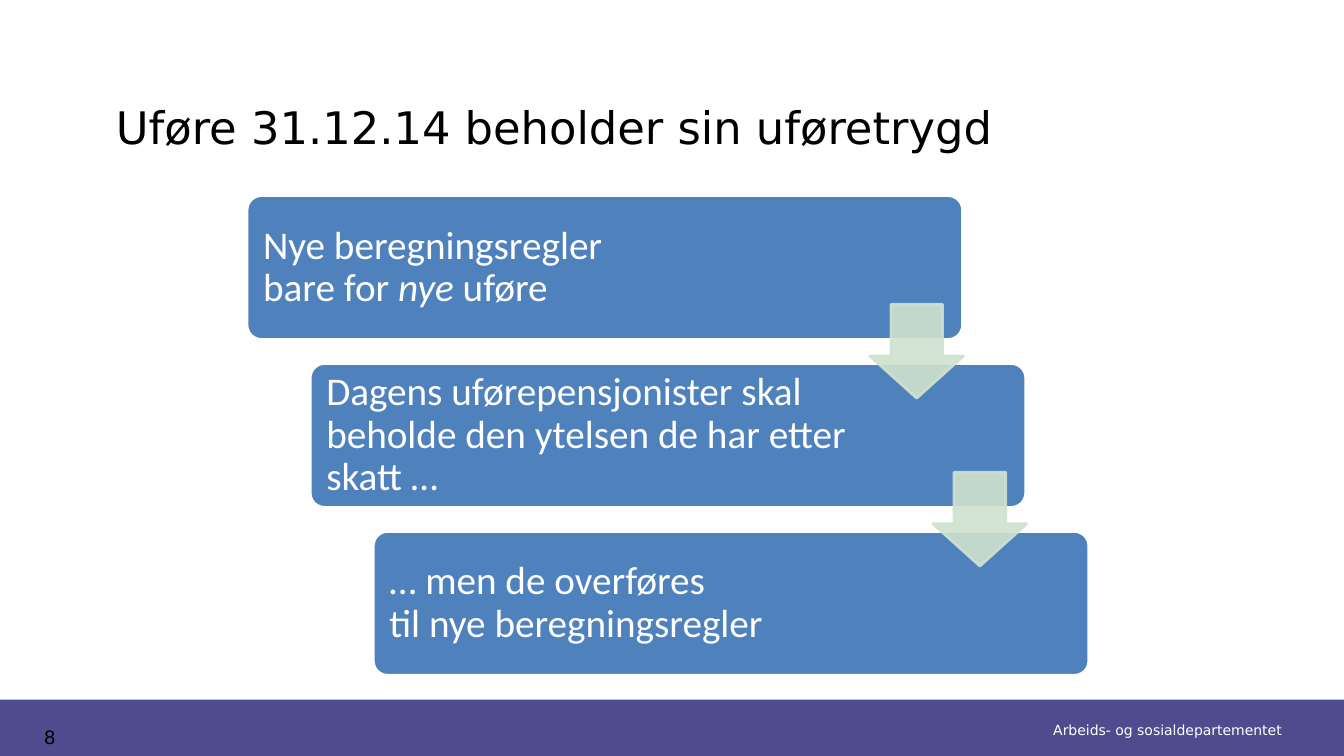
from lxml import etree
from pptx import Presentation
from pptx.dml.color import RGBColor
from pptx.enum.shapes import MSO_SHAPE
from pptx.enum.text import MSO_ANCHOR, PP_ALIGN
from pptx.oxml.ns import qn
from pptx.util import Inches, Pt

RECT, ROUND_RECT, DOWN_ARROW = (
    MSO_SHAPE.RECTANGLE, MSO_SHAPE.ROUNDED_RECTANGLE, MSO_SHAPE.DOWN_ARROW)
TOP, MIDDLE, BOTTOM = MSO_ANCHOR.TOP, MSO_ANCHOR.MIDDLE, MSO_ANCHOR.BOTTOM
LEFT, CENTER, RIGHT = PP_ALIGN.LEFT, PP_ALIGN.CENTER, PP_ALIGN.RIGHT

PURPLE = RGBColor(0x4E, 0x4C, 0x8E)
BLUE = RGBColor(0x4F, 0x81, 0xBD)
GREEN = RGBColor(0xCF, 0xE2, 0xCF)
WHITE = RGBColor(0xFF, 0xFF, 0xFF)
BLACK = RGBColor(0x00, 0x00, 0x00)

# Each step is a list of lines; each line is a list of (text, italic) runs
STEPS = [
    [[("Nye beregningsregler ", False)],
     [("bare for ", False), ("nye", True), (" uføre", False)]],
    [[("Dagens uførepensjonister skal beholde den ytelsen de har etter skatt …",
       False)]],
    [[("… men de overføres ", False)],
     [("til nye beregningsregler", False)]],
]


def add_block(s, kind, x, y, w, h, fill, line=None):
    sp = s.shapes.add_shape(kind, Inches(x), Inches(y), Inches(w), Inches(h))
    sp.shadow.inherit = False
    sp.fill.solid()
    sp.fill.fore_color.rgb = fill
    if line is None:
        sp.line.fill.background()
    else:
        sp.line.color.rgb = line
        sp.line.width = Pt(2)
    return sp


def add_text(s, x, y, w, h, lines, font, size, color,
             align=LEFT, anchor=TOP, inset=None, spacing=None):
    tb = s.shapes.add_textbox(Inches(x), Inches(y), Inches(w), Inches(h))
    tf = tb.text_frame
    tf.word_wrap = True
    tf.vertical_anchor = anchor
    if inset is not None:
        tf.margin_left = tf.margin_right = Inches(inset)
        tf.margin_top = tf.margin_bottom = Inches(inset)
    p = tf.paragraphs[0]
    p.alignment = align
    if spacing is not None:
        p.line_spacing = spacing
    for i, runs in enumerate(lines):
        if i:
            p.add_line_break()
        for text, italic in runs:
            r = p.add_run()
            r.text = text
            r.font.name = font
            r.font.size = Pt(size)
            r.font.color.rgb = color
            r.font.italic = italic
    # Line breaks take the same size as the text
    for br in p._p.findall(qn("a:br")):
        etree.SubElement(br, qn("a:rPr")).set("sz", str(size * 100))


def set_opacity(sp, percent):
    for clr in sp._element.spPr.iter(qn("a:srgbClr")):
        etree.SubElement(clr, qn("a:alpha")).set("val", str(percent * 1000))


def add_footer(s, x, y, w, h):
    add_block(s, RECT, x, y, w, h, PURPLE)
    add_text(s, x + 8.19, y + 0.17, 4.62, 0.27,
             [[("Arbeids- og sosialdepartementet", False)]],
             "DejaVu Sans", 10, WHITE, RIGHT, MIDDLE)
    add_text(s, x + 0.1, y + 0.2, 0.79, 0.29, [[("8", False)]],
             "Arial", 14, BLACK, CENTER)


def add_title(s, x, y, w, h):
    add_text(s, x, y, w, h,
             [[("Uføre 31.12.14 beholder sin uføretrygd", False)]],
             "DejaVu Sans", 32, BLACK, anchor=BOTTOM)


def add_staircase(s, x, y, w, h):
    """Boxes stepping down to the right, joined by arrows."""
    box_w, box_h, arrow = 0.85 * w, 0.3 * h, 0.93
    gaps = len(STEPS) - 1
    dx, dy = (w - box_w) / gaps, (h - box_h) / gaps

    # Boxes and their text
    for i, lines in enumerate(STEPS):
        left, top = x + i * dx, y + i * dy
        sp = add_block(s, ROUND_RECT, left, top, box_w, box_h, BLUE, WHITE)
        sp.adjustments[0] = 0.1
        add_text(s, left + 0.04, top + 0.04, 5.46, box_h - 0.08, lines,
                 "Calibri", 28, WHITE, anchor=MIDDLE, inset=0.12, spacing=0.9)

    # Arrows over the gaps, drawn last so they lie on top
    for i in range(gaps):
        sp = add_block(s, DOWN_ARROW, x + i * dx + box_w - arrow + 0.01,
                       y + i * dy + 1.08, arrow, arrow, GREEN, GREEN)
        sp.adjustments[0] = 0.55
        sp.adjustments[1] = 0.45
        set_opacity(sp, 90)


def main():
    prs = Presentation()
    prs.slide_width, prs.slide_height = Inches(13.33), Inches(7.5)
    s = prs.slides.add_slide(prs.slide_layouts[6])
    add_footer(s, 0, 6.94, 13.33, 0.59)
    add_title(s, 1.05, 0.32, 10.42, 1.25)
    add_staircase(s, 2.45, 1.94, 8.35, 4.76)
    prs.save("out.pptx")


if __name__ == "__main__":
    main()
